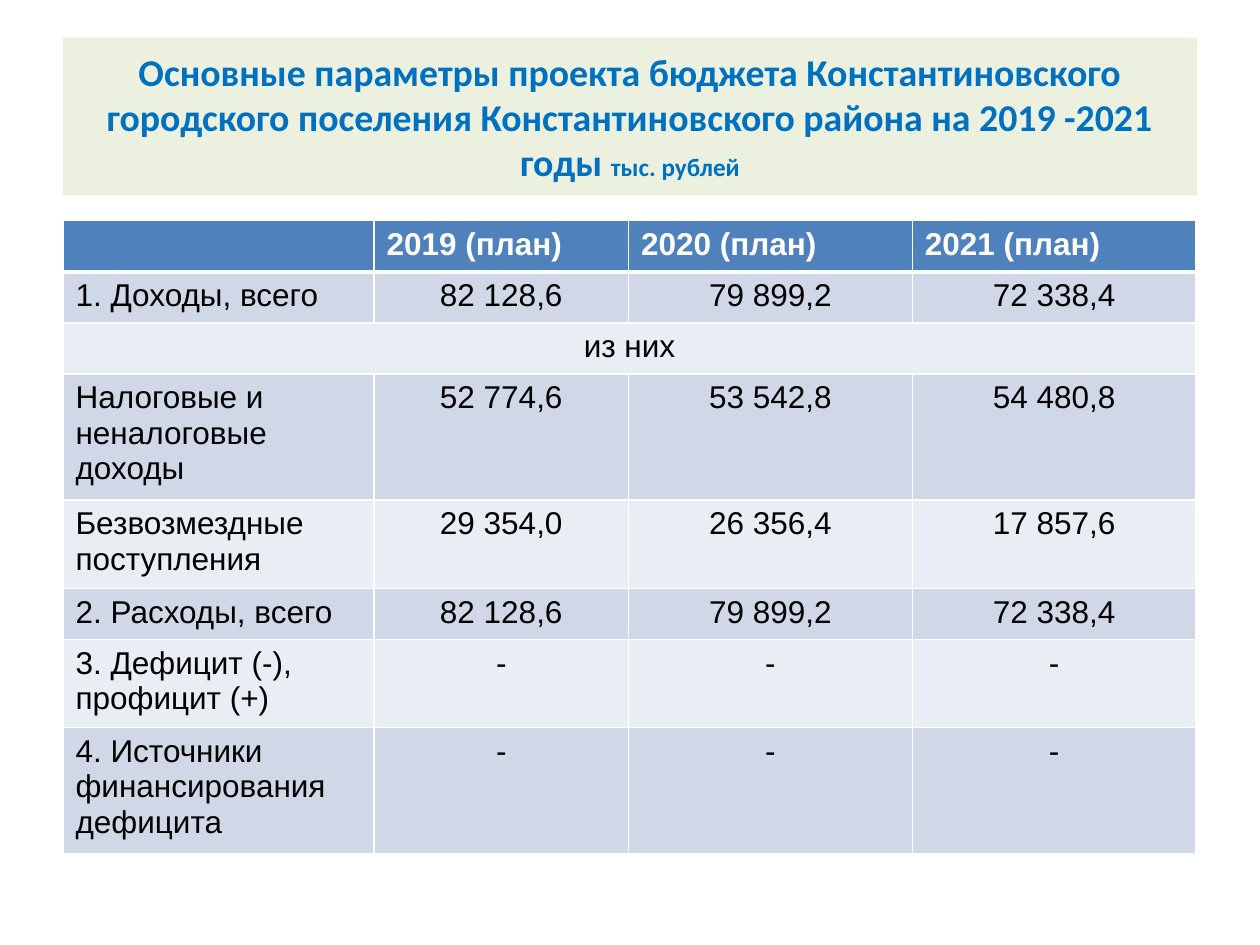
from lxml.etree import SubElement
from pptx import Presentation
from pptx.dml.color import RGBColor
from pptx.enum.shapes import MSO_SHAPE
from pptx.enum.text import MSO_ANCHOR, PP_ALIGN
from pptx.oxml.ns import qn
from pptx.util import Cm, Pt

RECT = MSO_SHAPE.RECTANGLE
MIDDLE = MSO_ANCHOR.MIDDLE
LEFT, CENTER = PP_ALIGN.LEFT, PP_ALIGN.CENTER

HUES = {
    "title": "0070C0",
    "panel": "EBF1DE",
    "head": "4F81BD",
    "dark": "D0D8E8",
    "light": "E9EDF4",
    "white": "FFFFFF",
    "black": "000000",
}

TITLE = [
    ("Основные параметры проекта бюджета Константиновского городского "
     "поселения Константиновского района на 2019 -2021 годы ", 21.6),
    ("тыс. рублей", 14.4),
]

ROWS = [
    ("", "2019 (план)", "2020 (план)", "2021 (план)"),
    ("1. Доходы, всего", "82 128,6", "79 899,2", "72 338,4"),
    ("из них",),
    ("Налоговые и неналоговые доходы", "52 774,6", "53 542,8", "54 480,8"),
    ("Безвозмездные поступления", "29 354,0", "26 356,4", "17 857,6"),
    ("2. Расходы, всего", "82 128,6", "79 899,2", "72 338,4"),
    ("3. Дефицит (-), профицит (+)", "-", "-", "-"),
    ("4. Источники финансирования дефицита", "-", "-", "-"),
]
WIDTHS = [6.27, 5.13, 5.72, 5.72]
LOW, MID, HIGH = 1.03, 1.78, 2.54
HEIGHTS = [LOW, LOW, LOW, HIGH, MID, LOW, MID, HIGH]


class Deck:
    def __init__(self, wide, high):
        self.show = Presentation()
        self.show.slide_width, self.show.slide_height = Cm(wide), Cm(high)
        self.slide = self.show.slides.add_slide(self.show.slide_layouts[6])

    def paint(self, item, hue):
        item.fill.solid()
        item.fill.fore_color.rgb = RGBColor.from_string(HUES[hue])

    def style(self, font, name, hue, bold):
        font.name, font.bold = name, bold
        font.color.rgb = RGBColor.from_string(HUES[hue])

    def title(self, left, top, wide, high, parts):
        box = self.slide.shapes.add_shape(
            RECT, Cm(left), Cm(top), Cm(wide), Cm(high))
        box.shadow.inherit = False
        box.line.fill.background()
        self.paint(box, "panel")
        frame = box.text_frame
        frame.word_wrap, frame.vertical_anchor = True, MIDDLE
        para = frame.paragraphs[0]
        para.alignment = CENTER
        for text, size in parts:
            run = para.add_run()
            run.text = text
            run.font.size = Pt(size)
            self.style(run.font, "Calibri", "title", True)

    def edge(self, cell, base):
        props = cell._tc.get_or_add_tcPr()
        for side in ("lnL", "lnR", "lnT", "lnB"):
            size = Pt(3 if side == base else 1)
            line = SubElement(props, qn(f"a:{side}"), w=str(size))
            fill = SubElement(line, qn("a:solidFill"))
            SubElement(fill, qn("a:srgbClr"), val=HUES["white"])

    def cell(self, cell, text, fill, hue, align, bold, base):
        self.edge(cell, base)
        self.paint(cell, fill)
        cell.text = text
        para = cell.text_frame.paragraphs[0]
        para.alignment = align
        para.font.size = Pt(18)
        self.style(para.font, "Arial", hue, bold)

    def table(self, left, top, widths, heights, rows):
        grid = self.slide.shapes.add_table(
            len(rows), len(widths), Cm(left), Cm(top),
            Cm(sum(widths)), Cm(sum(heights))).table
        for col, wide in zip(grid.columns, widths):
            col.width = Cm(wide)
        for r, (texts, high) in enumerate(zip(rows, heights)):
            grid.rows[r].height = Cm(high)
            head, span = r == 0, len(texts) == 1
            fill = "head" if head else "dark" if r % 2 else "light"
            hue = "white" if head else "black"
            base = "lnB" if head else "lnT" if r == 1 else None
            if span:
                grid.cell(r, 0).merge(grid.cell(r, len(widths) - 1))
            for c, text in enumerate(texts):
                align = CENTER if span or (c and not head) else LEFT
                self.cell(grid.cell(r, c), text, fill, hue, align, head, base)

    def save(self):
        self.show.save("out.pptx")


def main():
    deck = Deck(25.4, 19.05)
    deck.title(1.27, 0.76, 22.86, 3.18, TITLE)
    deck.table(1.27, 4.45, WIDTHS, HEIGHTS, ROWS)
    deck.save()


if __name__ == "__main__":
    main()
